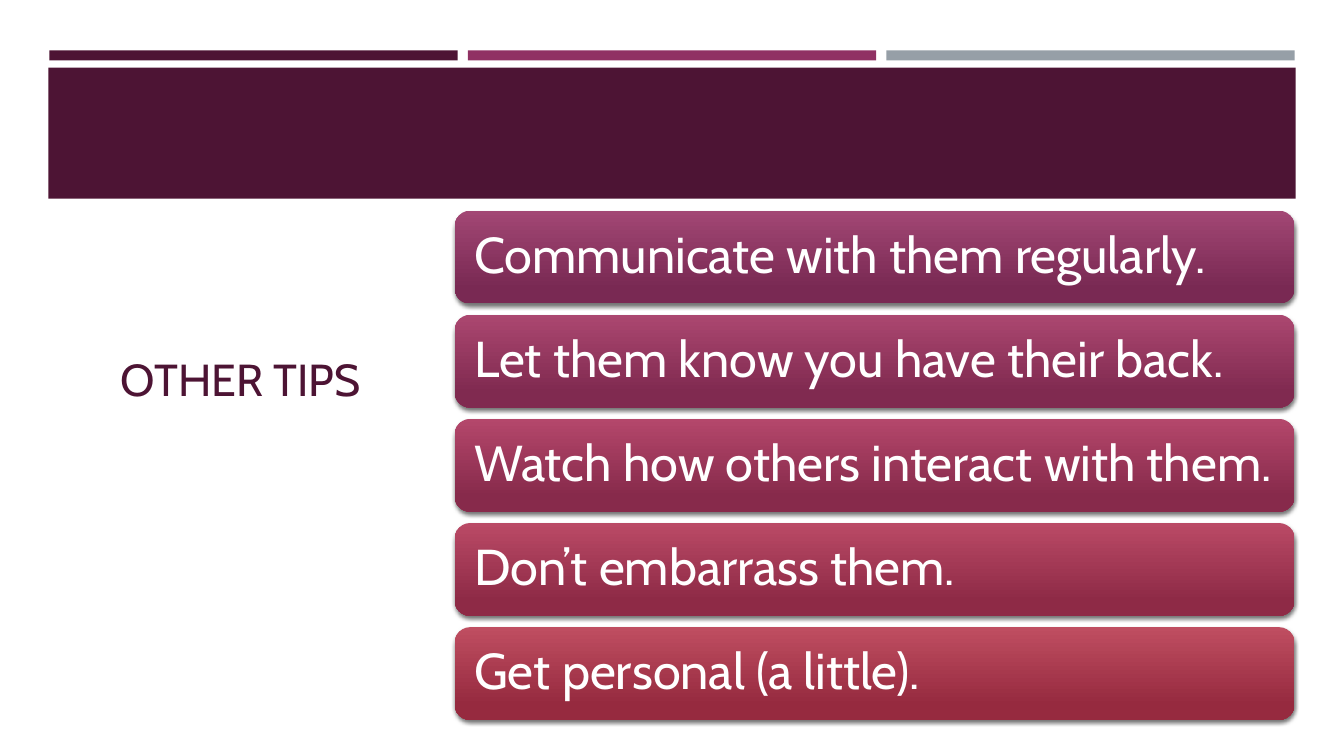
from dataclasses import dataclass

from lxml.etree import SubElement
from pptx import Presentation
from pptx.dml.color import RGBColor
from pptx.enum.shapes import MSO_SHAPE
from pptx.enum.text import MSO_ANCHOR
from pptx.oxml.ns import qn
from pptx.util import Inches, Pt

# Content: each tip with its gradient's top and bottom colour
TITLE = "OTHER TIPS"
TIPS = [
    ("Communicate with them regularly.", "A24774", "792953"),
    ("Let them know you have their back.", "AB4770", "802A50"),
    ("Watch how others interact with them.", "B4476B", "872A4B"),
    ("Don’t embarrass them.", "BA4A66", "8E2A46"),
    ("Get personal (a little).", "BF4E61", "962A3F"),
]


@dataclass(frozen=True)
class Theme:
    font: str = "Cabin"
    plum: str = "4D1434"
    magenta: str = "903163"
    grey: str = "969FA7"
    white: str = "FFFFFF"
    title_size: int = 32
    tip_size: int = 36


THEME = Theme()

# Layout in inches
SLIDE_WIDTH, SLIDE_HEIGHT = 13.33, 7.5
STRIP_LEFT, STRIP_TOP, STRIP_WIDTH, STRIP_HEIGHT = 0.49, 0.5, 4.05, 0.1
STRIP_PITCH = 4.15
BAND = (0.48, 0.67, 12.37, 1.3)
TITLE_BOX = (1.1, 1.18, 2.79, 5.15)
TIP_LEFT, TIP_TOP, TIP_WIDTH, TIP_HEIGHT = 4.51, 2.09, 8.33, 0.92
TIP_PITCH = 1.033


def add_block(slide, box, color=None, kind=MSO_SHAPE.RECTANGLE):
    shape = slide.shapes.add_shape(kind, *map(Inches, box))
    shape.shadow.inherit = False
    shape.line.fill.background()
    if color:
        shape.fill.solid()
        shape.fill.fore_color.rgb = RGBColor.from_string(color)
    return shape


def write_text(shape, text, *, size, color, inset, line_spacing=1.0):
    frame = shape.text_frame
    frame.word_wrap = True
    frame.vertical_anchor = MSO_ANCHOR.MIDDLE
    frame.margin_left = frame.margin_right = Inches(inset)
    frame.margin_top = frame.margin_bottom = Inches(min(inset, 0.15))
    paragraph = frame.paragraphs[0]
    paragraph.alignment = 1  # left
    paragraph.line_spacing = line_spacing
    run = paragraph.add_run()
    run.text = text
    run.font.name = THEME.font
    run.font.size = Pt(size)
    run.font.color.rgb = RGBColor.from_string(color)


def fill_gradient(shape, top_color, bottom_color):
    shape.fill.gradient()
    shape.fill.gradient_angle = 270
    stops = zip(shape.fill.gradient_stops, (0, 0.84), (top_color, bottom_color))
    for stop, position, color in stops:
        stop.position = position
        stop.color.rgb = RGBColor.from_string(color)


def add_shadow(shape):
    effects = shape._element.spPr.find(qn("a:effectLst"))
    shadow = SubElement(effects, qn("a:outerShdw"), blurRad=str(Pt(3)),
                        dist=str(Pt(2)), dir="5400000", rotWithShape="0")
    color = SubElement(shadow, qn("a:srgbClr"), val="000000")
    SubElement(color, qn("a:alpha"), val="55000")


def main():
    presentation = Presentation()
    presentation.slide_width = Inches(SLIDE_WIDTH)
    presentation.slide_height = Inches(SLIDE_HEIGHT)
    slide = presentation.slides.add_slide(presentation.slide_layouts[6])

    # Three strips above the header band
    for column, color in enumerate((THEME.plum, THEME.magenta, THEME.grey)):
        left = STRIP_LEFT + column * STRIP_PITCH
        add_block(slide, (left, STRIP_TOP, STRIP_WIDTH, STRIP_HEIGHT), color)
    add_block(slide, BAND, THEME.plum)

    # Title on the left
    title = slide.shapes.add_textbox(*map(Inches, TITLE_BOX))
    write_text(title, TITLE, size=THEME.title_size, color=THEME.plum, inset=0.1)

    # Stack of tips
    for row, (text, top_color, bottom_color) in enumerate(TIPS):
        box = (TIP_LEFT, TIP_TOP + row * TIP_PITCH, TIP_WIDTH, TIP_HEIGHT)
        tip = add_block(slide, box, kind=MSO_SHAPE.ROUNDED_RECTANGLE)
        fill_gradient(tip, top_color, bottom_color)
        add_shadow(tip)
        write_text(tip, text, size=THEME.tip_size, color=THEME.white,
                   inset=0.15, line_spacing=0.9)

    presentation.save("out.pptx")


if __name__ == "__main__":
    main()
